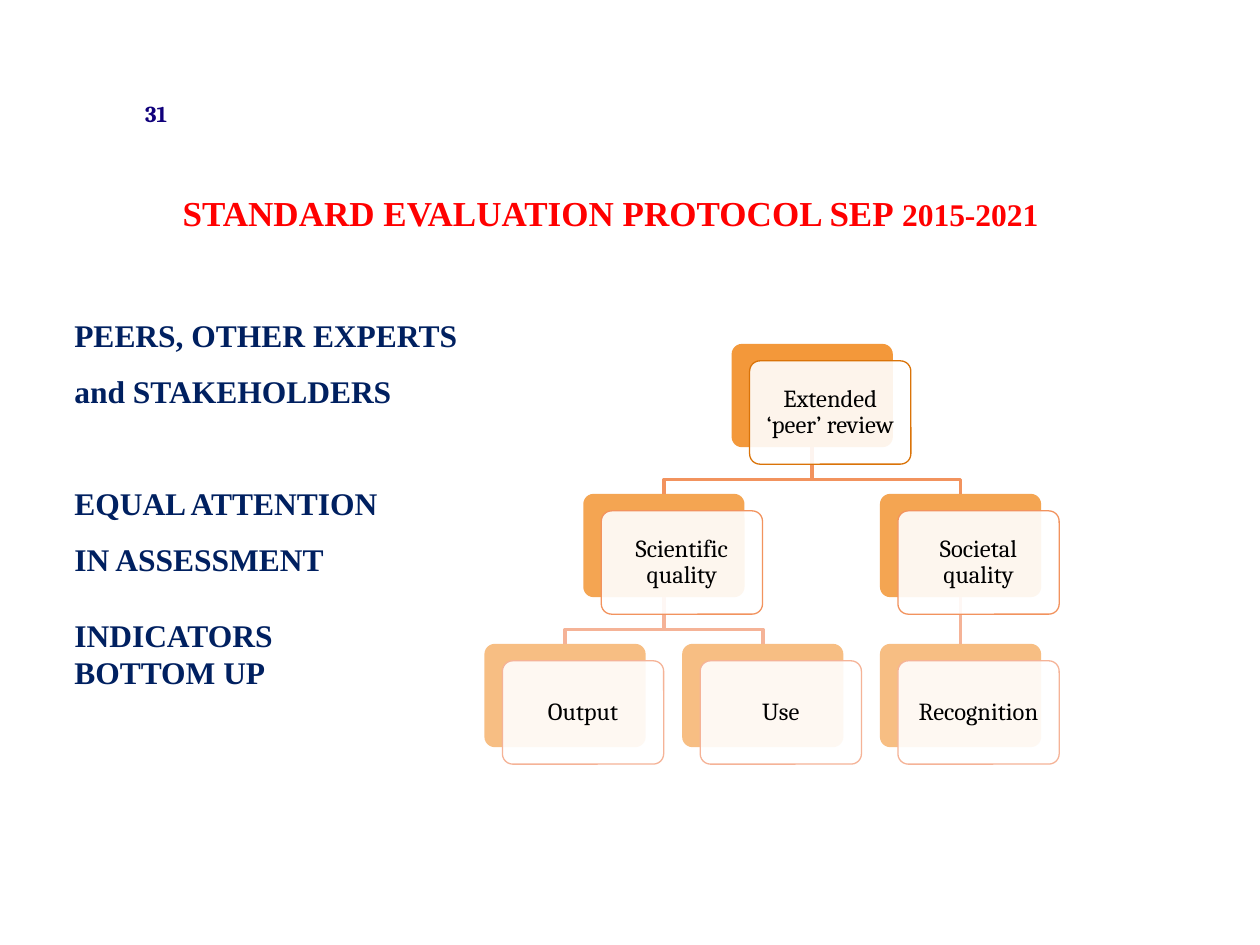
from lxml import etree
from pptx import Presentation
from pptx.dml.color import RGBColor
from pptx.enum.shapes import MSO_CONNECTOR, MSO_SHAPE
from pptx.enum.text import MSO_ANCHOR, PP_ALIGN
from pptx.oxml.ns import qn
from pptx.util import Pt

NODE_W, NODE_H = 92.16, 59.04
SHIFT_X, SHIFT_Y = 10.3, 9.7
HALF_COL, ROW = 56.5, 85.7
BEND = 18.5

# key: (text, column in half steps, row, parent)
NODES = {
    "review": ("Extended ‘peer’ review", 2.5, 0, None),
    "scientific": ("Scientific quality", 1, 1, "review"),
    "societal": ("Societal quality", 4, 1, "review"),
    "output": ("Output", 0, 2, "scientific"),
    "use": ("Use", 2, 2, "scientific"),
    "recognition": ("Recognition", 4, 2, "societal"),
}
# per row: opacity of the back card, colour of outline and incoming link
LEVELS = [(80, "DA7308"), (70, "F2935E"), (50, "F5B397")]

BODY = [
    ("PEERS, OTHER EXPERTS", {"line_spacing": Pt(32)}),
    ("and STAKEHOLDERS", {"line_spacing": Pt(32)}),
    ("EQUAL ATTENTION", {"line_spacing": Pt(32), "space_before": Pt(32)}),
    ("IN ASSESSMENT", {"line_spacing": Pt(32)}),
    ("INDICATORS", {"space_before": Pt(21.6)}),
    ("BOTTOM UP", {}),
]


def rgb(color):
    return RGBColor.from_string(color)


def set_all(obj, values):
    for name, value in values.items():
        setattr(obj, name, value)


def set_margins(tf, left, top, right, bottom):
    set_all(tf, {"margin_left": Pt(left), "margin_top": Pt(top),
                 "margin_right": Pt(right), "margin_bottom": Pt(bottom)})


def add_run(p, text, size, color, font, bold=False):
    r = p.add_run()
    r.text = text
    set_all(r.font, {"size": Pt(size), "name": font, "bold": bold})
    r.font.color.rgb = rgb(color)


def add_text_frame(s, box):
    tf = s.shapes.add_textbox(*map(Pt, box)).text_frame
    tf.word_wrap = True
    return tf


def add_page_number(s, box):
    tf = add_text_frame(s, box)
    set_margins(tf, 0, 0, 0, 0)
    p = tf.paragraphs[0]
    p.alignment = PP_ALIGN.CENTER
    add_run(p, "31", 13, "10007B", "Cambria", True)


def add_title(s, box):
    p = add_text_frame(s, box).paragraphs[0]
    p.alignment = PP_ALIGN.CENTER
    for text, size in [("STANDARD EVALUATION PROTOCOL SEP", 20), (" 2015-2021", 18)]:
        add_run(p, text, size, "FF0000", "Times New Roman", True)


def add_body(s, box):
    tf = add_text_frame(s, box)
    set_margins(tf, 0, 32, 0, 0)
    for i, (text, spacing) in enumerate(BODY):
        p = tf.add_paragraph() if i else tf.paragraphs[0]
        set_all(p, spacing)
        add_run(p, text, 18, "002060", "Times New Roman", True)


def add_card(s, x, y, color, opacity):
    sp = s.shapes.add_shape(MSO_SHAPE.ROUNDED_RECTANGLE,
                            Pt(x), Pt(y), Pt(NODE_W), Pt(NODE_H))
    sp.adjustments[0] = 0.1
    sp.shadow.inherit = False
    sp.fill.solid()
    sp.fill.fore_color.rgb = rgb(color)
    clr = sp.fill._xPr.find(qn("a:solidFill"))[0]
    etree.SubElement(clr, qn("a:alpha")).set("val", str(opacity * 1000))
    sp.line.fill.background()
    return sp


def set_line(sp, color, width):
    sp.line.color.rgb = rgb(color)
    sp.line.width = Pt(width)


def add_link(s, parent, child, color):
    """Join two back cards, with an elbow if they are not in one column."""
    x1, y1 = parent.left + parent.width // 2, parent.top + parent.height
    x2, y2 = child.left + child.width // 2, child.top
    if x1 == x2:
        link = s.shapes.add_connector(MSO_CONNECTOR.STRAIGHT, x1, y1, x2, y2)
        link.begin_connect(parent, 2)
        link.end_connect(child, 0)
        etree.SubElement(link._element.spPr, qn("a:effectLst"))
    else:
        bend = y1 + Pt(BEND)
        fb = s.shapes.build_freeform(x1, y1)
        fb.add_line_segments([(x1, bend), (x2, bend), (x2, y2)], close=False)
        link = fb.convert_to_shape()
        link.fill.background()
        link.shadow.inherit = False
    set_line(link, color, 2)


def add_label_card(s, x, y, text, color):
    sp = add_card(s, x, y, "FFFFFF", 90)
    set_line(sp, color, 0.75)
    tf = sp.text_frame
    set_all(tf, {"word_wrap": True, "vertical_anchor": MSO_ANCHOR.MIDDLE})
    set_margins(tf, 4, 4, 4, 4)
    p = tf.paragraphs[0]
    set_all(p, {"alignment": PP_ALIGN.CENTER, "line_spacing": 0.9})
    add_run(p, text, 14, "000000", "Cambria")


def add_hierarchy(s, left, top):
    spots = {key: (left + col * HALF_COL, top + row * ROW)
             for key, (_, col, row, _) in NODES.items()}
    backs = {key: add_card(s, *spots[key], "F07F09", LEVELS[node[2]][0])
             for key, node in NODES.items()}
    for key, (_, _, row, parent) in NODES.items():
        if parent:
            add_link(s, backs[parent], backs[key], LEVELS[row][1])
    for key, (text, _, row, _) in NODES.items():
        x, y = spots[key]
        add_label_card(s, x + SHIFT_X, y + SHIFT_Y, text, LEVELS[row][1])


def main():
    prs = Presentation()
    set_all(prs, {"slide_width": Pt(720), "slide_height": Pt(540)})
    s = prs.slides.add_slide(prs.slide_layouts[6])
    add_body(s, (42.5, 138.2, 640.8, 368.6))
    add_hierarchy(s, 276.8, 196.5)
    add_page_number(s, (69.8, 56.9, 38.9, 37.4))
    add_title(s, (59.8, 105.8, 578.2, 31.7))
    prs.save("out.pptx")


if __name__ == "__main__":
    main()
